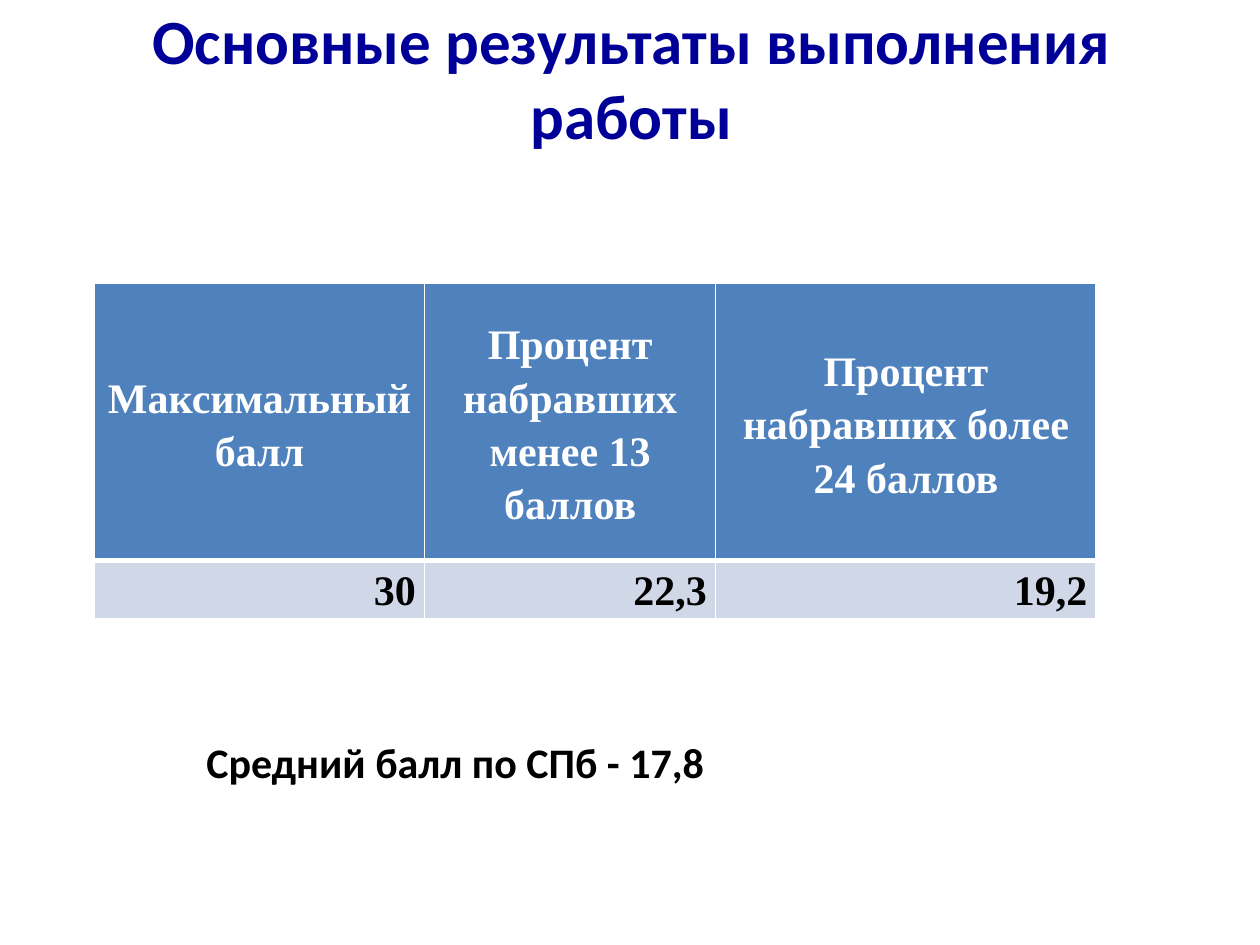
from lxml import etree
from pptx import Presentation
from pptx.dml.color import RGBColor
from pptx.enum.text import MSO_ANCHOR, PP_ALIGN
from pptx.oxml.ns import qn
from pptx.util import Inches, Pt

LEFT, CENTER, RIGHT = PP_ALIGN.LEFT, PP_ALIGN.CENTER, PP_ALIGN.RIGHT
TOP, MIDDLE = MSO_ANCHOR.TOP, MSO_ANCHOR.MIDDLE
COLORS = {
    "title": "000099",
    "header": "4F81BD",
    "band": "D0D8E8",
    "white": "FFFFFF",
    "black": "000000",
}
COLUMN_WIDTHS = (2.62, 2.31, 3.02)
ROW_HEIGHTS = (2.2, 0.41)
HEADINGS = (
    "Максимальный балл",
    "Процент набравших менее 13 баллов",
    "Процент набравших более\n24 баллов",
)
RESULTS = ("30", "22,3", "19,2")


def write_text(frame, text, size=24, font="Calibri", color="black", align=LEFT, spacing=None):
    """Write one bold paragraph with the given format."""
    para = frame.paragraphs[0]
    para.text = text
    para.alignment = align
    para.line_spacing = spacing
    for span in para.runs:
        span.font.size = Pt(size)
        span.font.name = font
        span.font.bold = True
        span.font.color.rgb = RGBColor.from_string(COLORS[color])


def add_border(cell, side, width):
    """Draw a white line on one side of a cell."""
    properties = cell._tc.get_or_add_tcPr()
    line = etree.Element(qn(f"a:ln{side}"), w=str(Pt(width)))
    fill = etree.SubElement(line, qn("a:solidFill"))
    etree.SubElement(fill, qn("a:srgbClr"), val=COLORS["white"])
    properties.insert("LRTB".index(side), line)


def add_title(page, left, top, width, height):
    """Place the slide title in its box."""
    frame = page.shapes.add_textbox(left, top, width, height).text_frame
    frame.word_wrap = True
    frame.vertical_anchor = MIDDLE
    frame.margin_top = 0
    frame.margin_bottom = Inches(0.13)
    write_text(frame, "Основные результаты выполнения работы",
               size=36, color="title", align=CENTER)


def add_results_table(page, left, top):
    """Place the table of headings and results."""
    table = page.shapes.add_table(
        len(ROW_HEIGHTS), len(COLUMN_WIDTHS), left, top,
        Inches(sum(COLUMN_WIDTHS)), Inches(sum(ROW_HEIGHTS))).table
    for column, width in zip(table.columns, COLUMN_WIDTHS):
        column.width = Inches(width)
    styles = (
        (HEADINGS, "header", "white", CENTER, MIDDLE, 1, 3),
        (RESULTS, "band", "black", RIGHT, TOP, 3, 1),
    )
    for index, (texts, fill, color, align, anchor, above, below) in enumerate(styles):
        table.rows[index].height = Inches(ROW_HEIGHTS[index])
        for cell, text in zip(table.rows[index].cells, texts):
            cell.margin_left = cell.margin_right = Inches(0.07)
            cell.margin_top = cell.margin_bottom = 0
            cell.vertical_anchor = anchor
            cell.fill.solid()
            cell.fill.fore_color.rgb = RGBColor.from_string(COLORS[fill])
            for side, width in zip("LRTB", (1, 1, above, below)):
                add_border(cell, side, width)
            write_text(cell.text_frame, text, font="Times New Roman",
                       color=color, align=align, spacing=1.15)


def add_average(page, left, top, width, height):
    """Place the line with the average score."""
    frame = page.shapes.add_textbox(left, top, width, height).text_frame
    frame.word_wrap = False
    write_text(frame, "Средний балл по СПб - 17,8")


def main():
    """Build and save the slide."""
    deck = Presentation()
    deck.slide_width, deck.slide_height = Inches(10), Inches(7.5)
    page = deck.slides.add_slide(deck.slide_layouts[6])
    add_title(page, Inches(0.51), Inches(0.05), Inches(9), Inches(1.25))
    add_results_table(page, Inches(0.75), Inches(2.25))
    add_average(page, Inches(1.54), Inches(5.8), Inches(4.26), Inches(0.5))
    deck.save("out.pptx")


if __name__ == "__main__":
    main()
